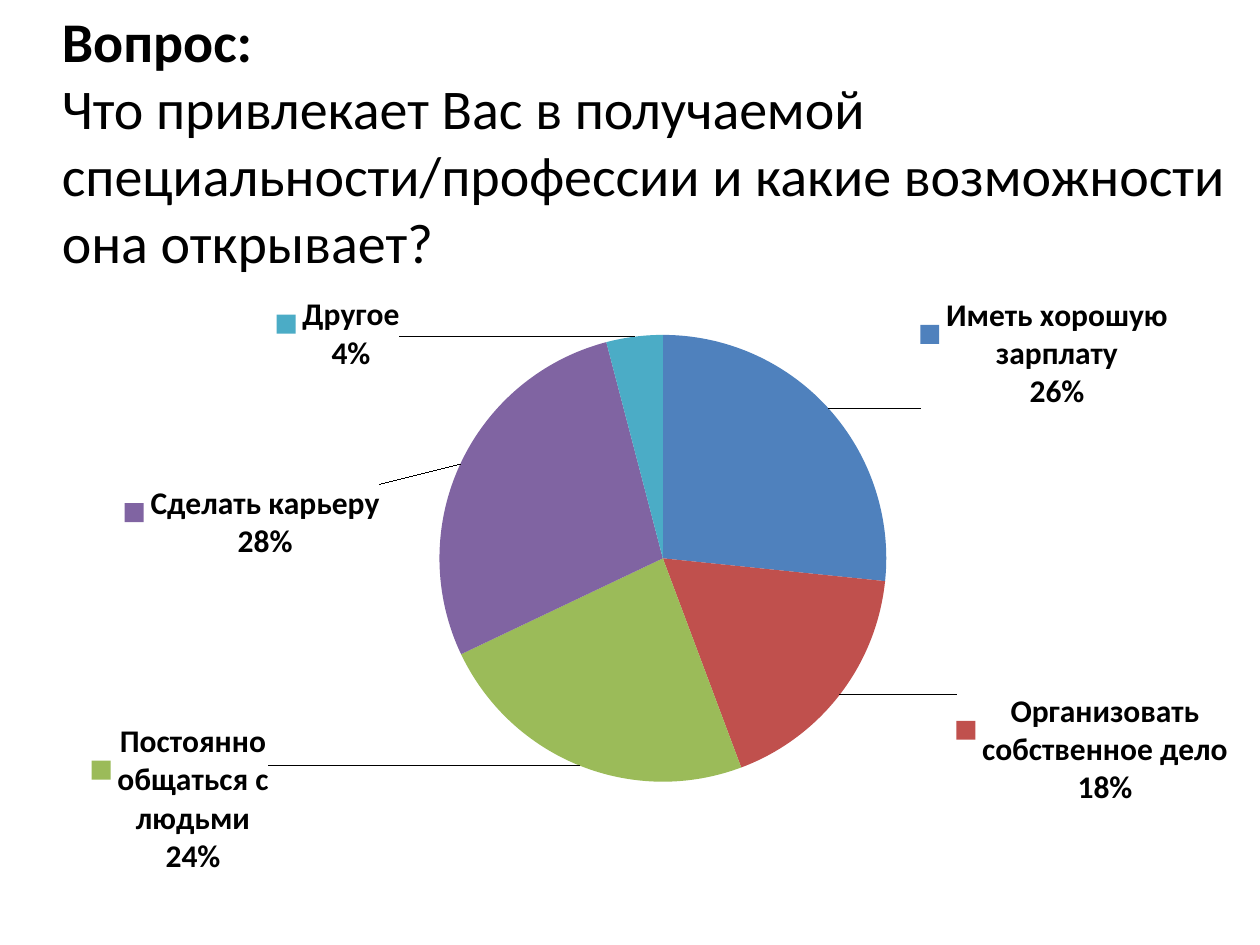
from lxml import etree
from pptx import Presentation
from pptx.chart.data import CategoryChartData
from pptx.dml.color import RGBColor
from pptx.enum.chart import XL_CHART_TYPE, XL_LABEL_POSITION
from pptx.enum.text import MSO_ANCHOR, MSO_AUTO_SIZE, PP_ALIGN
from pptx.oxml import parse_xml
from pptx.oxml.ns import nsdecls, qn
from pptx.util import Inches, Pt

PIE = XL_CHART_TYPE.PIE
BEST_FIT = XL_LABEL_POSITION.BEST_FIT
TOP = MSO_ANCHOR.TOP
NO_AUTOFIT = MSO_AUTO_SIZE.NONE
LEFT = PP_ALIGN.LEFT
CENTER = PP_ALIGN.CENTER
FONT = "Calibri"
BLACK = "000000"

# Answer, votes, stated share, slice colour, label offset as a share of the chart
ANSWERS = [
    ("Иметь хорошую зарплату", 98, "26%", "4F81BD", (0.07, 0.01)),
    ("Организовать собственное дело", 65, "18%", "C0504D", (0.09, -0.01)),
    ("Постоянно общаться с людьми", 87, "24%", "9BBB59", (-0.25, -0.07)),
    ("Сделать карьеру", 103, "28%", "8064A2", (-0.06, 0.14)),
    ("Другое", 15, "4%", "4BACC6", (-0.19, 0.06)),
]


def rgb(colour):
    """Turn a hex string into a colour."""
    return RGBColor.from_string(colour)


def format_font(font, size, bold=False, colour=BLACK):
    """Apply the deck's typeface with a size, weight and colour."""
    font.name = FONT
    font.size = Pt(size)
    font.bold = bold
    font.color.rgb = rgb(colour)


def write_line(paragraph, text, size=32, bold=False, align=LEFT):
    """Write one formatted run into a paragraph."""
    paragraph.alignment = align
    run = paragraph.add_run()
    run.text = text
    format_font(run.font, size, bold)


def manual_layout(**settings):
    """Build a chart layout element from its settings."""
    parts = "".join(f'<c:{name} val="{value}"/>' for name, value in settings.items())
    return parse_xml(
        f'<c:layout {nsdecls("c")}><c:manualLayout>{parts}</c:manualLayout></c:layout>'
    )


def add_question(slide):
    """Place the survey question in the title."""
    question = slide.shapes.title
    question.left, question.top = Inches(0.39), Inches(0)
    question.width, question.height = Inches(9.61), Inches(2.26)
    frame = question.text_frame
    frame.word_wrap = True
    frame.auto_size = NO_AUTOFIT
    frame.vertical_anchor = TOP
    write_line(frame.paragraphs[0], "Вопрос:", bold=True)
    write_line(
        frame.add_paragraph(),
        "Что привлекает Вас в получаемой специальности/профессии "
        "и какие возможности она открывает?",
    )


def label_slice(point, answer, share, offset):
    """Write a slice's answer and share beside its key, moved off the pie."""
    label = point.data_label
    frame = label.text_frame
    write_line(frame.paragraphs[0], answer, size=18, bold=True, align=CENTER)
    write_line(frame.add_paragraph(), share, size=18, bold=True, align=CENTER)
    label.position = BEST_FIT
    element = frame._txBody.getparent().getparent()
    for layout in element.findall(qn("c:layout")):
        element.remove(layout)
    element.insert(1, manual_layout(x=offset[0], y=offset[1]))
    for flag in ("c:showLegendKey", "c:showVal", "c:showCatName",
                 "c:showSerName", "c:showPercent"):
        element.find(qn(flag)).set("val", "1")


def format_labels(series):
    """Set the shared label format and turn on leader lines."""
    labels = series.data_labels
    format_font(labels.font, 18, bold=True)
    labels.show_value = True
    labels.show_category_name = True
    labels.show_series_name = True
    labels.show_percentage = True
    labels.show_legend_key = True
    labels.position = BEST_FIT
    element = labels._element
    leader = element.find(qn("c:showLeaderLines"))
    if leader is None:
        leader = etree.SubElement(element, qn("c:showLeaderLines"))
    leader.set("val", "1")


def add_answers_pie(slide):
    """Draw the answers as a pie chart."""
    data = CategoryChartData()
    data.categories = [answer for answer, *_ in ANSWERS]
    data.add_series("Столбец1", [votes for _, votes, *_ in ANSWERS])
    chart = slide.shapes.add_chart(
        PIE, Inches(0.23), Inches(1.87), Inches(9.77), Inches(5.63), data
    ).chart
    chart.has_title = False
    chart.has_legend = False
    format_font(chart.font, 18)
    plot = chart.plots[0]
    plot.vary_by_categories = True
    series = plot.series[0]
    format_labels(series)
    for index, (answer, _, share, colour, offset) in enumerate(ANSWERS):
        point = series.points[index]
        point.format.fill.solid()
        point.format.fill.fore_color.rgb = rgb(colour)
        label_slice(point, answer, share, offset)

    area = chart._chartSpace.chart.plotArea
    for layout in area.findall(qn("c:layout")):
        area.remove(layout)
    area.insert(0, manual_layout(
        layoutTarget="inner", xMode="edge", yMode="edge", x=0.33, y=0.14, w=0.37, h=0.63
    ))


def main():
    """Build and save the survey slide."""
    deck = Presentation()
    deck.slide_width, deck.slide_height = Inches(10), Inches(7.5)
    slide = deck.slides.add_slide(deck.slide_layouts.get_by_name("Title Only"))
    add_question(slide)
    add_answers_pie(slide)
    deck.save("out.pptx")


if __name__ == "__main__":
    main()
